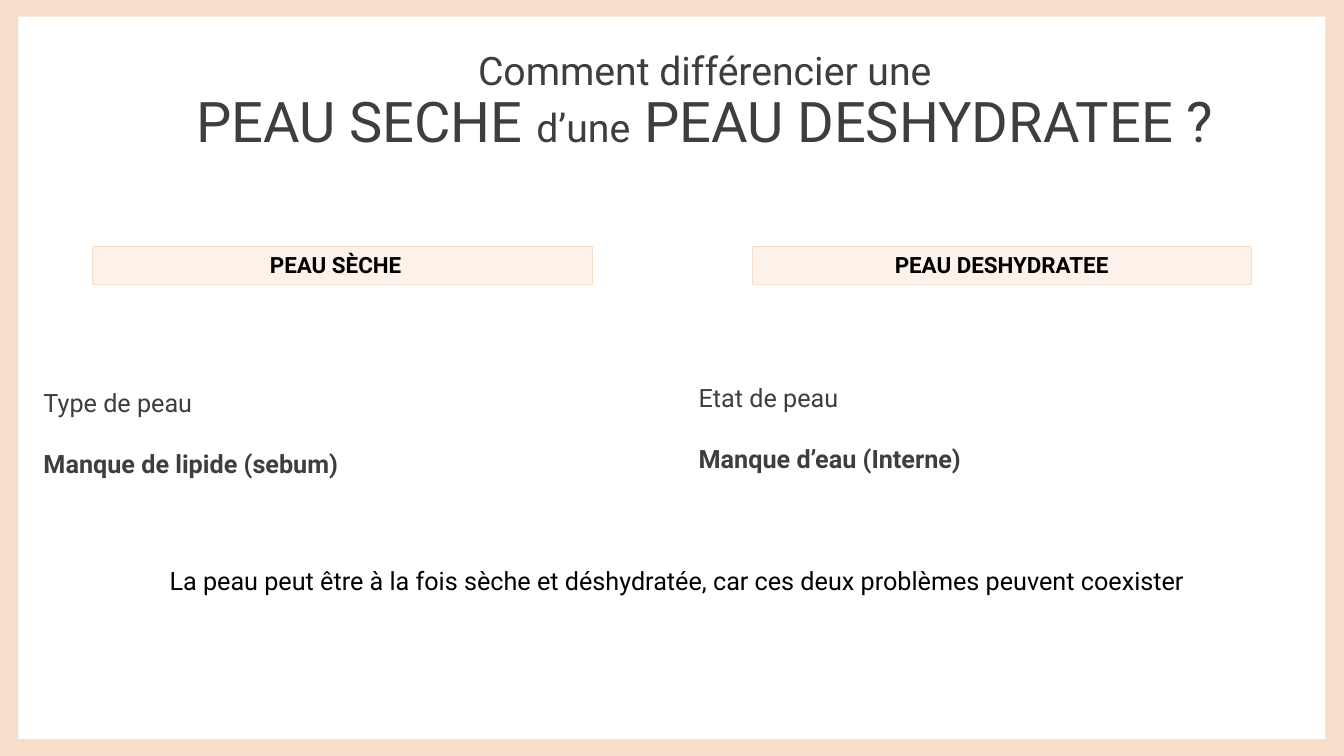
from dataclasses import dataclass

from pptx import Presentation
from pptx.dml.color import RGBColor as RGB
from pptx.enum.shapes import MSO_SHAPE as Shape
from pptx.enum.text import MSO_ANCHOR as Anchor, PP_ALIGN as Align
from pptx.util import Inches, Pt

COLS, ROWS = 80, 45
CELL = Inches(1) // 6


@dataclass(frozen=True)
class Theme:
    font: str = "Roboto"
    peach: RGB = RGB(0xF7, 0xDE, 0xCA)
    cream: RGB = RGB(0xFC, 0xF2, 0xEA)
    grey: RGB = RGB(0x3E, 0x3E, 0x3E)
    black: RGB = RGB(0, 0, 0)
    big: int = 40
    lead: int = 28
    body: int = 18
    label: int = 16


class Page:
    """Draws on one slide; every box is (column, row, columns, rows)."""

    def __init__(self, slide, theme):
        self.slide, self.theme = slide, theme

    def place(self, box):
        return [round(n * CELL) for n in box]

    def rect(self, box, fill, line=None):
        shape = self.slide.shapes.add_shape(Shape.RECTANGLE, *self.place(box))
        shape.shadow.inherit = False
        shape.fill.solid()
        shape.fill.fore_color.rgb = fill
        if line is None:
            shape.line.fill.background()
        else:
            shape.line.color.rgb = line
            shape.line.width = Pt(0.25)
        return shape

    def frame(self, side):
        for row in (0, ROWS - 1):
            self.rect((0, row, COLS, 1), self.theme.peach)
        for col in (0, COLS - side):
            self.rect((col, 0, side, ROWS), self.theme.peach)

    def text(self, box, anchor=Anchor.TOP):
        frame = self.slide.shapes.add_textbox(*self.place(box)).text_frame
        frame.word_wrap = True
        frame.vertical_anchor = anchor
        return frame

    def run(self, para, words, size, color, bold=False):
        run = para.add_run()
        run.text = words
        font = run.font
        font.name, font.size, font.bold = self.theme.font, Pt(size), bold
        font.color.rgb = color

    def title(self, box, lead, parts):
        para = self.text(box, Anchor.MIDDLE).paragraphs[0]
        para.alignment = Align.CENTER
        para.line_spacing = 0.9
        self.run(para, lead, self.theme.lead, self.theme.grey)
        para.add_line_break()
        for words, size in parts:
            self.run(para, words, size, self.theme.grey)

    def label(self, box, words, right):
        """Heading in a tinted bar; right is the right inset in inches."""
        shape = self.rect(box, self.theme.cream, self.theme.peach)
        frame = shape.text_frame
        frame.vertical_anchor = Anchor.TOP
        frame.margin_right = Inches(right)
        para = frame.paragraphs[0]
        para.alignment = Align.CENTER
        self.run(para, words, self.theme.label, self.theme.black, True)

    def facts(self, box, kind, lack):
        frame = self.text(box)
        self.run(frame.paragraphs[0], kind, self.theme.body, self.theme.grey)
        para = frame.add_paragraph()
        para.space_before = Pt(22)
        self.run(para, lack, self.theme.body, self.theme.grey, True)

    def note(self, box, words):
        para = self.text(box).paragraphs[0]
        para.alignment = Align.CENTER
        self.run(para, words, self.theme.body, self.theme.black)


def main():
    deck = Presentation()
    deck.slide_width, deck.slide_height = COLS * CELL, ROWS * CELL
    theme = Theme()
    page = Page(deck.slides.add_slide(deck.slide_layouts[6]), theme)

    page.frame(1.1)
    page.title((6.55, 3.55, 70.8, 5.2), "Comment différencier une", [
        ("PEAU SECHE ", theme.big),
        ("d’une", theme.lead),
        (" PEAU DESHYDRATEE ?", theme.big),
    ])
    skins = [
        (5.5, "PEAU SÈCHE", 0.23,
         2, 22.75, "Type de peau", "Manque de lipide (sebum)"),
        (44.75, "PEAU DESHYDRATEE", 0.1,
         41, 22.45, "Etat de peau", "Manque d’eau (Interne)"),
    ]
    for bar, name, right, col, row, kind, lack in skins:
        page.label((bar, 14.65, 29.75, 2.25), name, right)
        page.facts((col, row, 37.2, 6), kind, lack)
    page.note((8.95, 33.35, 62.7, 2.4),
              "La peau peut être à la fois sèche et déshydratée, "
              "car ces deux problèmes peuvent coexister")
    deck.save("out.pptx")


if __name__ == "__main__":
    main()
